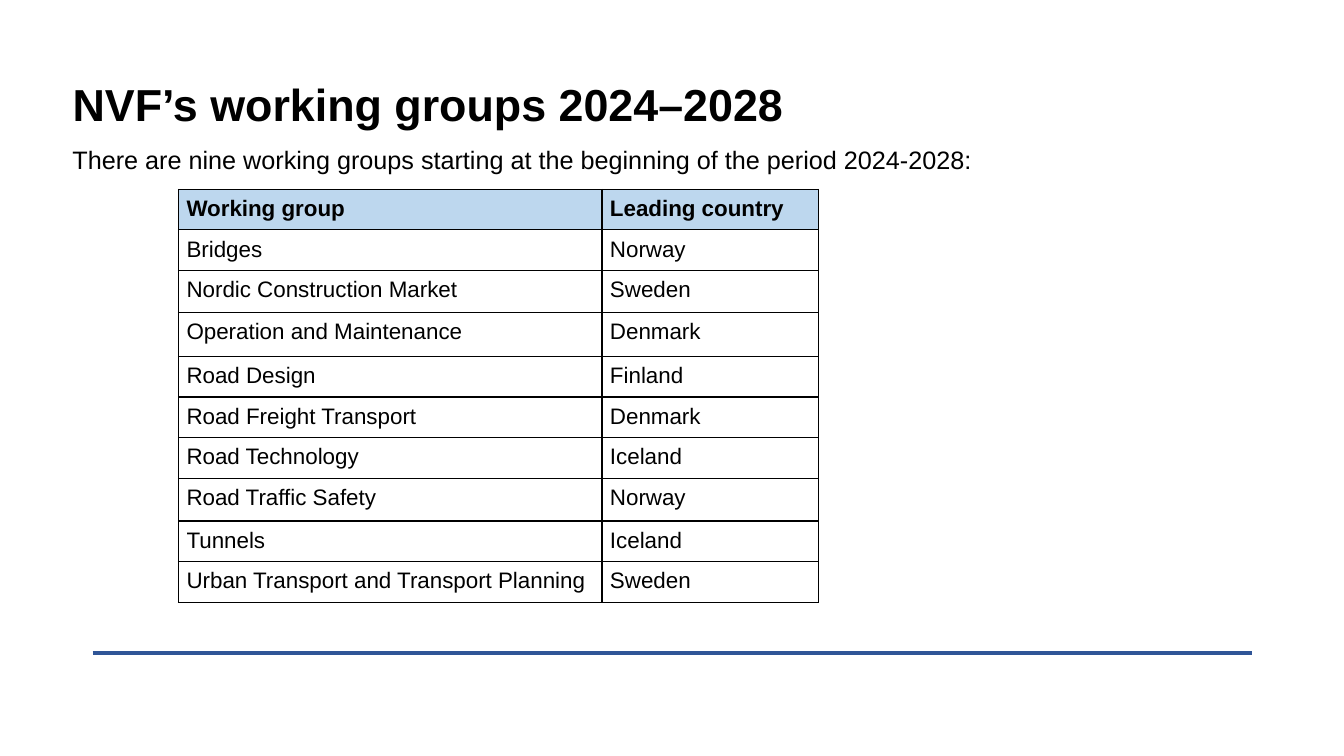
from lxml.etree import SubElement
from pptx import Presentation
from pptx.dml.color import RGBColor
from pptx.enum.shapes import MSO_CONNECTOR
from pptx.enum.text import MSO_ANCHOR, PP_ALIGN
from pptx.oxml.ns import qn
from pptx.util import Inches, Pt

TITLE = "NVF’s working groups 2024–2028"
INTRO = ("There are nine working groups starting at the beginning "
         "of the period 2024-2028:")
GROUPS = [
    ("Working group", "Leading country"),
    ("Bridges", "Norway"),
    ("Nordic Construction Market", "Sweden"),
    ("Operation and Maintenance", "Denmark"),
    ("Road Design", "Finland"),
    ("Road Freight Transport", "Denmark"),
    ("Road Technology", "Iceland"),
    ("Road Traffic Safety", "Norway"),
    ("Tunnels", "Iceland"),
    ("Urban Transport and Transport Planning", "Sweden"),
]
COLS = (4.2, 2.15)
ROWS = (0.4, 0.4, 0.42, 0.44, 0.4, 0.4, 0.41, 0.42, 0.4, 0.41)
COLORS = {"text": "000000", "head": "BDD7EE", "body": "FFFFFF", "rule": "2F5597"}
LEFT = 0.62


def color(name):
    return RGBColor.from_string(COLORS[name])


def write(frame, text, size, bold=False):
    frame.text = text
    par = frame.paragraphs[0]
    par.alignment = PP_ALIGN.LEFT
    font = par.runs[0].font
    font.name, font.size, font.bold = "Arial", Pt(size), bold
    font.color.rgb = color("text")
    return par


def border(cell):
    """Draw a 1 pt line on all four sides; call before filling the cell."""
    props = cell._tc.get_or_add_tcPr()
    for side in ("a:lnL", "a:lnR", "a:lnT", "a:lnB"):
        line = SubElement(props, qn(side), w=str(Pt(1)))
        fill = SubElement(line, qn("a:solidFill"))
        SubElement(fill, qn("a:srgbClr"), val=COLORS["text"])


def add_groups(slide):
    box = (Inches(n) for n in (1.77, 1.88, sum(COLS), sum(ROWS)))
    table = slide.shapes.add_table(len(ROWS), len(COLS), *box).table
    for col, width in zip(table.columns, COLS):
        col.width = Inches(width)
    for r, (row, height) in enumerate(zip(table.rows, ROWS)):
        row.height = Inches(height)
        for cell, text in zip(row.cells, GROUPS[r]):
            cell.margin_left = cell.margin_right = Inches(0.08)
            cell.margin_top = cell.margin_bottom = Inches(0.07)
            border(cell)
            cell.fill.solid()
            cell.fill.fore_color.rgb = color("body" if r else "head")
            write(cell.text_frame, text, 16, bold=r == 0)


def add_rule(slide):
    y = Inches(6.48)
    rule = slide.shapes.add_connector(
        MSO_CONNECTOR.STRAIGHT, Inches(0.92), y, Inches(12.42), y)
    rule.line.color.rgb = color("rule")
    rule.line.width = Pt(3)
    SubElement(rule._element.spPr, qn("a:effectLst"))


def main():
    deck = Presentation()
    deck.slide_width, deck.slide_height = Inches(13.33), Inches(7.5)
    slide = deck.slides.add_slide(deck.slide_layouts[5])
    add_rule(slide)

    title = slide.shapes.title
    title.left, title.top = Inches(LEFT), Inches(0.34)
    title.width, title.height = Inches(12.1), Inches(1.45)
    title.text_frame.vertical_anchor = MSO_ANCHOR.MIDDLE
    write(title.text_frame, TITLE, 32, bold=True).line_spacing = 0.9

    add_groups(slide)
    intro = slide.shapes.add_textbox(
        Inches(LEFT), Inches(1.38), Inches(11.22), Inches(0.4))
    intro.text_frame.word_wrap = True
    write(intro.text_frame, INTRO, 18)
    deck.save("out.pptx")


if __name__ == "__main__":
    main()
